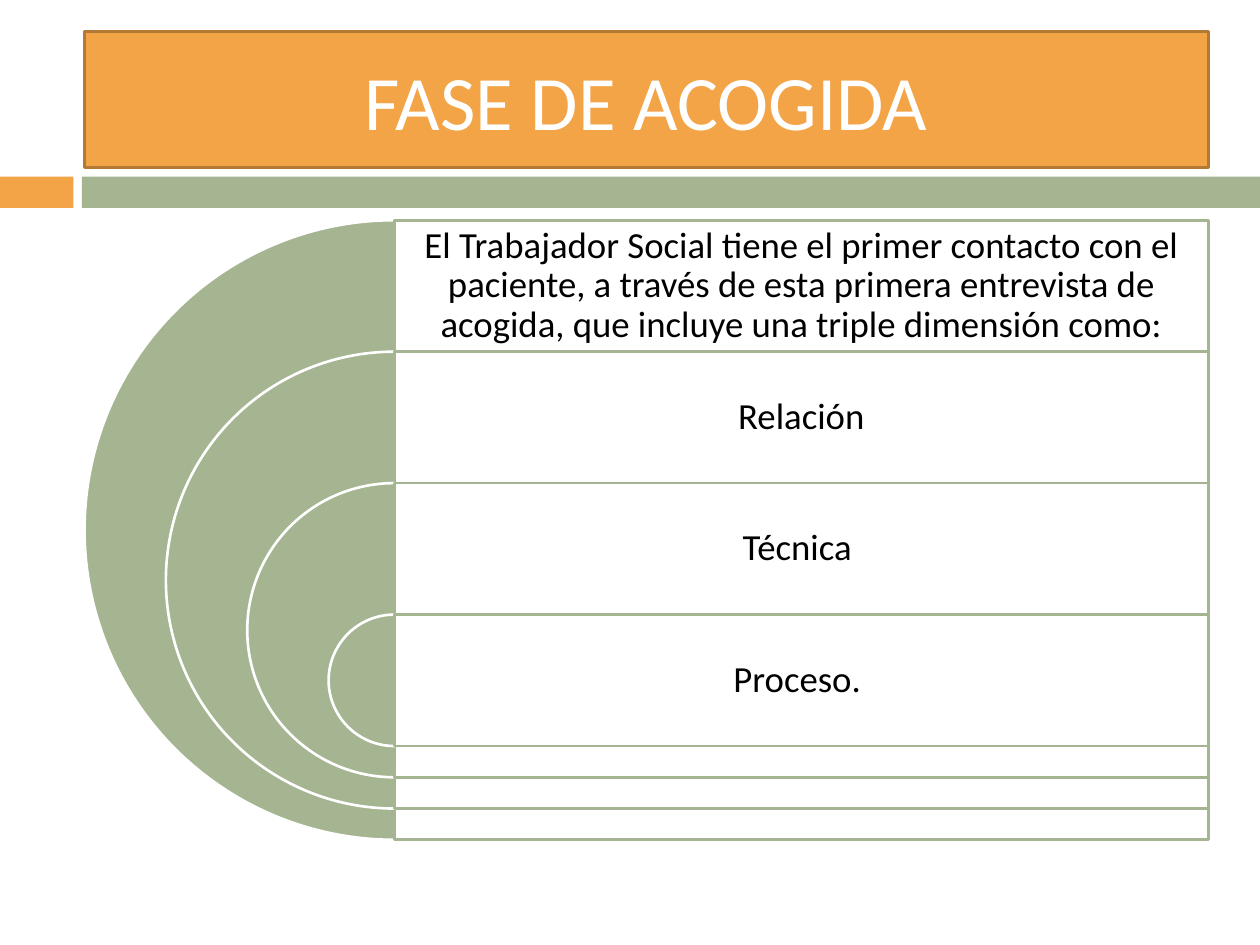
"""Build the FASE DE ACOGIDA slide with nested half circles and stacked panels."""
from lxml import etree
from pptx import Presentation
from pptx.dml.color import RGBColor
from pptx.enum.shapes import MSO_SHAPE
from pptx.enum.text import MSO_ANCHOR, MSO_AUTO_SIZE, PP_ALIGN
from pptx.oxml.ns import qn
from pptx.util import Cm, Pt

ORANGE = RGBColor(0xF3, 0xA4, 0x47)
BROWN = RGBColor(0xB4, 0x79, 0x35)
GREEN = RGBColor(0xA5, 0xB5, 0x92)
WHITE = RGBColor(0xFF, 0xFF, 0xFF)
BLACK = RGBColor(0, 0, 0)

CENTER, RIGHT, TOP = 7.95, 24.36, 4.44
ROW, TAIL = 2.65, 0.63
STAGES = [
    "El Trabajador Social tiene el primer contacto con el paciente, a través de "
    "esta primera entrevista de acogida, que incluye una triple dimensión como:",
    "Relación",
    "Técnica ",
    "Proceso. ",
]


def write(shape, text, size, color, spacing=1.0, inset=0.23):
    frame = shape.text_frame
    frame.word_wrap = True
    frame.auto_size = MSO_AUTO_SIZE.NONE
    frame.vertical_anchor = MSO_ANCHOR.MIDDLE
    frame.margin_left = frame.margin_right = Cm(inset)
    frame.margin_top = frame.margin_bottom = Cm(inset)
    paragraph = frame.paragraphs[0]
    paragraph.alignment = PP_ALIGN.CENTER
    paragraph.line_spacing = spacing
    run = paragraph.add_run()
    run.text = text
    run.font.name = "Calibri"
    run.font.size = Pt(size)
    run.font.color.rgb = color


def add_block(kind, left, top, width, height, fill, line=None):
    block = slide.shapes.add_shape(kind, Cm(left), Cm(top), Cm(width), Cm(height))
    block.shadow.inherit = False
    block.fill.solid()
    block.fill.fore_color.rgb = fill
    if line is None:
        block.line.fill.background()
    else:
        block.line.color.rgb = line
        block.line.width = Pt(1.5)
    return block


prs = Presentation()
prs.slide_width, prs.slide_height = Cm(25.4), Cm(19.05)
slide = prs.slides.add_slide(prs.slide_layouts[5])

heading = slide.shapes.title
heading.left, heading.top, heading.width, heading.height = Cm(1.7), Cm(0.63), Cm(22.66), Cm(2.75)
heading.fill.solid()
heading.fill.fore_color.rgb = ORANGE
heading.line.color.rgb = BROWN
heading.line.width = Pt(1.5)
write(heading, "FASE DE ACOGIDA", size=44, color=WHITE)

add_block(MSO_SHAPE.RECTANGLE, 0, 3.56, 1.48, 0.63, ORANGE)
add_block(MSO_SHAPE.RECTANGLE, 1.65, 3.56, 23.75, 0.63, GREEN)

for level, stage in enumerate(STAGES):
    top = TOP + level * ROW
    diameter = ROW + (len(STAGES) - 1 - level) * (ROW + TAIL)

    half_circle = add_block(MSO_SHAPE.PIE, CENTER - diameter / 2, top, diameter, diameter, GREEN, WHITE)
    half_circle.adjustments[0] = 54
    half_circle.adjustments[1] = 162

    panel = add_block(MSO_SHAPE.RECTANGLE, CENTER, top, RIGHT - CENTER, diameter, WHITE, GREEN)
    panel_color = panel.fill._xPr.find(qn("a:solidFill"))[0]
    etree.SubElement(panel_color, qn("a:alpha"), val="90000")

    caption = slide.shapes.add_textbox(Cm(CENTER), Cm(top), Cm(RIGHT - CENTER), Cm(ROW))
    write(caption, stage, size=21, color=BLACK, spacing=0.9)

prs.save("out.pptx")
